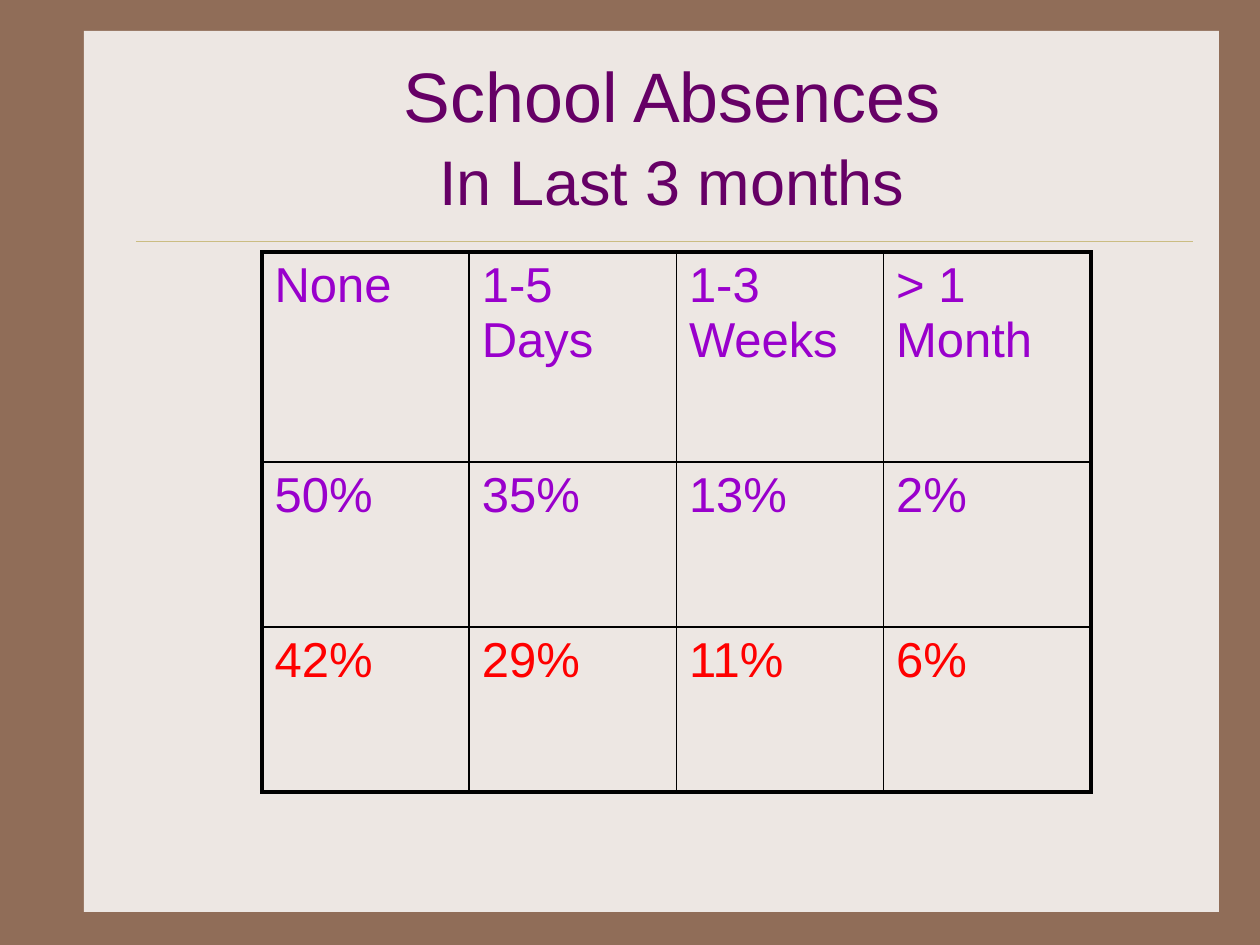
from lxml import etree
from pptx import Presentation
from pptx.dml.color import RGBColor
from pptx.enum import shapes, text
from pptx.oxml import ns
from pptx import util as u

SCALE = 914400 / 126
COLORS = {
    "frame": "906D58",
    "paper": "EDE7E3",
    "rule": "CBBD83",
    "title": "660066",
    "first": "9900CC",
    "second": "FF0000",
    "border": "000000",
}
ABSENCES = [
    ["None", "1-5 Days", "1-3 Weeks", "> 1 Month"],
    ["50%", "35%", "13%", "2%"],
    ["42%", "29%", "11%", "6%"],
]
ROW_HEIGHTS = [210, 165, 165]
ROW_COLORS = ["first", "first", "second"]


def px(*lengths):
    return [u.Emu(round(length * SCALE)) for length in lengths]


def rgb(name):
    return RGBColor.from_string(COLORS[name])


def style(run, size, color):
    run.font.name = "Arial"
    run.font.size = u.Pt(size)
    run.font.color.rgb = rgb(color)


def add_background(slide, left, top, width, height):
    slide.background.fill.solid()
    slide.background.fill.fore_color.rgb = rgb("frame")
    paper = slide.shapes.add_shape(
        shapes.MSO_SHAPE.RECTANGLE, *px(left, top, width, height))
    paper.shadow.inherit = False
    paper.fill.solid()
    paper.fill.fore_color.rgb = rgb("paper")
    paper.line.fill.background()
    rule = slide.shapes.add_connector(
        shapes.MSO_CONNECTOR.STRAIGHT,
        *px(left + 52, top + 210, left + width - 26, top + 210))
    rule.line.color.rgb = rgb("rule")
    rule.line.width = u.Pt(0.25)
    etree.SubElement(rule._element.spPr, ns.qn("a:effectLst"))


def add_title(slide, left, top, width, height):
    title = slide.shapes.add_textbox(*px(left, top, width, height))
    frame = title.text_frame
    frame.word_wrap = True
    frame.vertical_anchor = text.MSO_ANCHOR.MIDDLE
    frame.text = "School Absences\vIn Last 3 months"
    heading = frame.paragraphs[0]
    heading.alignment = text.PP_ALIGN.CENTER
    heading.line_spacing = 1.08
    for run, size in zip(heading.runs, (40, 36)):
        style(run, size, "title")


def set_borders(cell, widths):
    properties = cell._tc.get_or_add_tcPr()
    for index, (side, width) in enumerate(widths.items()):
        line = etree.Element(ns.qn(f"a:ln{side}"), w=str(u.Pt(width)))
        fill = etree.SubElement(line, ns.qn("a:solidFill"))
        etree.SubElement(fill, ns.qn("a:srgbClr"), val=COLORS["border"])
        properties.insert(index, line)


def add_absences(slide, left, top, width, height):
    last_row, last_column = len(ABSENCES) - 1, len(ABSENCES[0]) - 1
    table = slide.shapes.add_table(
        last_row + 1, last_column + 1, *px(left, top, width, height)).table
    table.first_row = False
    table.horz_banding = False
    for row, row_height in zip(table.rows, ROW_HEIGHTS):
        row.height = px(row_height)[0]
    for r, values in enumerate(ABSENCES):
        for c, value in enumerate(values):
            cell = table.cell(r, c)
            cell.fill.background()
            cell.text_frame.text = value
            style(cell.text_frame.paragraphs[0].runs[0], 28, ROW_COLORS[r])
            outer = {"L": c == 0, "R": c == last_column,
                     "T": r == 0, "B": r == last_row}
            set_borders(cell, {side: 2.25 if edge else 1
                               for side, edge in outer.items()})


def main():
    deck = Presentation()
    deck.slide_width, deck.slide_height = px(1260, 945)
    slide = deck.slides.add_slide(deck.slide_layouts[6])
    add_background(slide, 84, 31, 1135, 881)
    add_title(slide, 147, 53, 1050, 157)
    add_absences(slide, 262, 252, 829, sum(ROW_HEIGHTS))
    deck.save("out.pptx")


if __name__ == "__main__":
    main()
